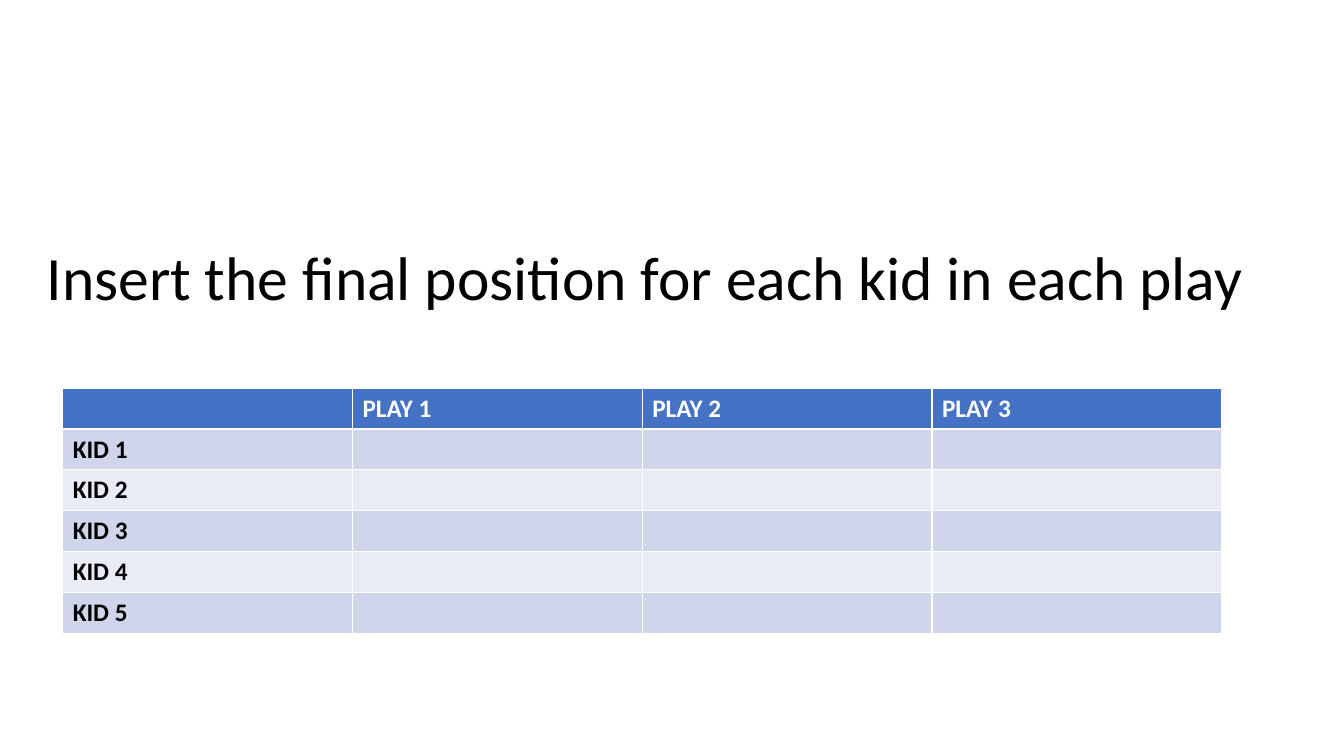
from dataclasses import dataclass

from pptx import Presentation
from pptx.dml.color import RGBColor
from pptx.enum import text
from pptx.util import Cm, Pt


@dataclass(frozen=True)
class Theme:
    font: str = "Calibri"
    title_size: int = 44
    table_size: int = 18
    dark: str = "000000"
    light: str = "FFFFFF"
    header: str = "4472C4"
    bands: tuple = ("CFD5EA", "E9EBF5")


theme = Theme()


def style_text(paragraph, size, color, bold=False):
    for run in paragraph.runs:
        run.font.name = theme.font
        run.font.size = Pt(size)
        run.font.bold = bold
        run.font.color.rgb = RGBColor.from_string(color)


deck = Presentation()
deck.slide_width, deck.slide_height = Cm(33.87), Cm(19.05)
slide = deck.slides.add_slide(deck.slide_layouts[5])

# Heading
heading = slide.shapes.title
heading.left, heading.top = Cm(0.92), Cm(5.23)
heading.width, heading.height = Cm(32.95), Cm(3.68)
heading_frame = heading.text_frame
heading_frame.text = "Insert the final position for each kid in each play"
heading_frame.word_wrap = True
heading_frame.auto_size = text.MSO_AUTO_SIZE.NONE
heading_frame.vertical_anchor = text.MSO_ANCHOR.MIDDLE
heading_line = heading_frame.paragraphs[0]
heading_line.alignment = text.PP_ALIGN.LEFT
heading_line.line_spacing = 0.9
style_text(heading_line, theme.title_size, theme.dark)

# Score grid: one row per kid, one column per play
plays = [f"PLAY {number}" for number in range(1, 4)]
kids = [f"KID {number}" for number in range(1, 6)]
rows = [["", *plays]] + [[kid] + [""] * len(plays) for kid in kids]

scores = slide.shapes.add_table(
    len(rows), len(rows[0]), Cm(1.58), Cm(9.78), Cm(29.21), Cm(6.18)
).table
scores.first_col = True

for row_index, row in enumerate(rows):
    is_header = row_index == 0
    fill = theme.header if is_header else theme.bands[(row_index - 1) % 2]
    for column_index, label in enumerate(row):
        cell = scores.cell(row_index, column_index)
        cell.fill.solid()
        cell.fill.fore_color.rgb = RGBColor.from_string(fill)
        if label:
            cell.text_frame.text = label
            color = theme.light if is_header else theme.dark
            style_text(cell.text_frame.paragraphs[0], theme.table_size, color, bold=True)

deck.save("out.pptx")
